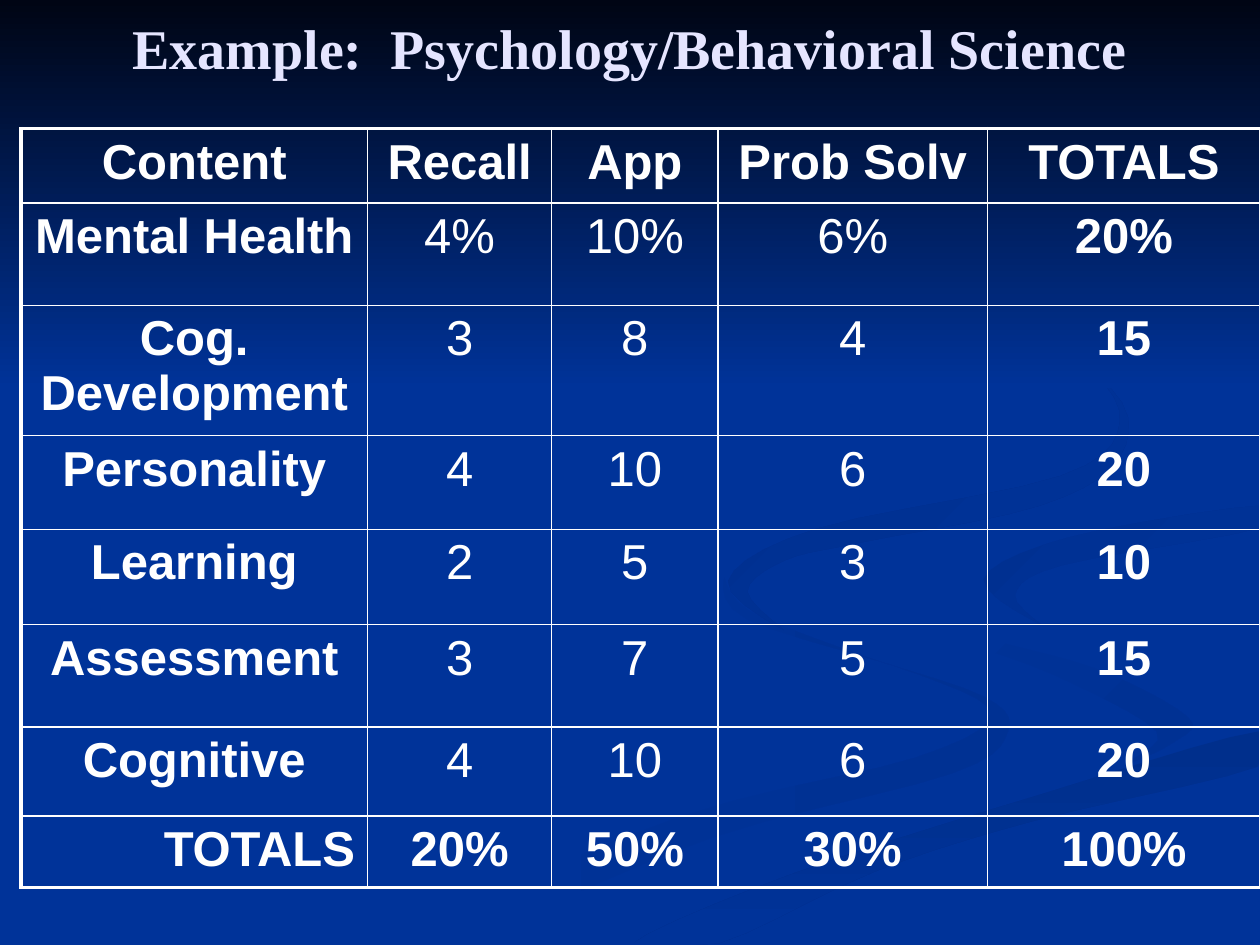
from typing import NamedTuple

from lxml.etree import SubElement
from pptx import Presentation
from pptx.dml.color import RGBColor
from pptx.dml.fill import FillFormat
from pptx.enum.shapes import MSO_SHAPE
from pptx.enum.text import MSO_ANCHOR, PP_ALIGN
from pptx.oxml.ns import qn
from pptx.slide import Slide
from pptx.table import _Cell
from pptx.text.text import TextFrame
from pptx.util import Pt

WHITE = RGBColor(0xFF, 0xFF, 0xFF)
LAVENDER = RGBColor(0xE5, 0xE5, 0xFF)
BLUE = RGBColor(0x00, 0x33, 0x99)
MIDNIGHT = RGBColor(0x00, 0x05, 0x14)
DUSK = RGBColor(0x00, 0x31, 0x93)
SHADE = RGBColor(0x00, 0x2F, 0x8C)
DEEP = RGBColor(0x00, 0x2F, 0x8E)
MIST = RGBColor(0x00, 0x30, 0x91)

SLIDE_WIDTH, SLIDE_HEIGHT = 720, 540
OUTER_BORDER, INNER_BORDER = 2.25, 1
CURVE_STEPS = 5

Point = tuple[float, float]


class Ribbon(NamedTuple):
    start: RGBColor
    end: RGBColor
    angle: int  # clockwise from left-to-right
    outline: list[Point]


RIBBONS = [
    Ribbon(BLUE, DUSK, 0, [
        (562, 398), (491, 374), (428, 349), (414, 330), (427, 354), (524, 385), (566, 408),
        (523, 433), (388, 467), (216, 539), (260, 539), (406, 479), (544, 442), (576, 418)]),
    Ribbon(BLUE, DUSK, 45, [
        (679, 410), (626, 382), (546, 359), (521, 334), (537, 360), (603, 386), (661, 418),
        (644, 436), (671, 424)]),
    Ribbon(SHADE, BLUE, 90, [
        (362, 539), (411, 539), (500, 498), (591, 469), (719, 438), (719, 418), (598, 453),
        (454, 499)]),
    Ribbon(MIST, BLUE, 45, [
        (562, 331), (595, 357), (580, 340), (607, 323), (719, 302), (719, 289), (611, 307)]),
    Ribbon(DEEP, BLUE, 45, [
        (492, 310), (594, 289), (640, 261), (634, 221), (549, 168), (616, 205), (640, 241),
        (606, 272), (467, 302), (416, 332), (448, 360), (427, 338), (449, 320)]),
]

COLUMN_WIDTHS = [198, 105.3, 95, 154, 156]
ROW_HEIGHTS = [42.5, 58.5, 58.5, 53.5, 54.5, 58.5, 51, 29.5]
BLUEPRINT = [
    ("Content", "Recall", "App", "Prob Solv", "TOTALS"),
    ("Mental Health", "4%", "10%", "6%", "20%"),
    ("Cog. Development", "3", "8", "4", "15"),
    ("Personality", "4", "10", "6", "20"),
    ("Learning", "2", "5", "3", "10"),
    ("Assessment", "3", "7", "5", "15"),
    ("Cognitive", "4", "10", "6", "20"),
    ("TOTALS", "20%", "50%", "30%", "100%"),
]
TITLE_FONT = {"name": "Times New Roman", "size": Pt(32), "bold": True}
CELL_FONT = {"name": "Arial", "size": Pt(28)}


def write(frame: TextFrame, wording: str, align: PP_ALIGN, color: RGBColor, font: dict) -> None:
    paragraph = frame.paragraphs[0]
    paragraph.alignment = align
    run = paragraph.add_run()
    run.text = wording
    run.font.color.rgb = color
    for attribute, value in font.items():
        setattr(run.font, attribute, value)


def apply_gradient(fill: FillFormat, start: RGBColor, end: RGBColor, angle: int) -> None:
    fill.gradient()
    fill.gradient_angle = (360 - angle) % 360
    for stop, color in zip(fill.gradient_stops, (start, end)):
        stop.color.rgb = color


def smooth_outline(outline: list[Point]) -> list[Point]:
    """Round a closed outline with a Catmull-Rom curve kept inside the slide."""
    def blend(a: float, b: float, c: float, d: float, t: float) -> float:
        return b + t / 2 * (c - a + t * (2*a - 5*b + 4*c - d + t * (3*(b - c) + d - a)))

    count = len(outline)
    points = []
    for i in range(count):
        nearby = [outline[(i + offset) % count] for offset in (-1, 0, 1, 2)]
        xs, ys = zip(*nearby)
        for step in range(CURVE_STEPS):
            t = step / CURVE_STEPS
            points.append((min(blend(*xs, t), SLIDE_WIDTH), min(blend(*ys, t), SLIDE_HEIGHT)))
    return points


def draw_ribbon(slide: Slide, ribbon: Ribbon) -> None:
    first, *rest = [(Pt(x), Pt(y)) for x, y in smooth_outline(ribbon.outline)]
    builder = slide.shapes.build_freeform(*first)
    builder.add_line_segments(rest, close=True)
    shape = builder.convert_to_shape()
    shape.shadow.inherit = False
    shape.line.fill.background()
    apply_gradient(shape.fill, ribbon.start, ribbon.end, ribbon.angle)


def draw_night_sky(slide: Slide) -> None:
    sky = slide.shapes.add_shape(MSO_SHAPE.RECTANGLE, 0, 0, Pt(SLIDE_WIDTH), Pt(222))
    sky.shadow.inherit = False
    sky.line.fill.background()
    apply_gradient(sky.fill, MIDNIGHT, BLUE, 90)


def draw_title(slide: Slide) -> None:
    frame = slide.shapes.add_textbox(Pt(36), 0, Pt(648), Pt(54)).text_frame
    frame.word_wrap = True
    frame.vertical_anchor = MSO_ANCHOR.MIDDLE
    write(frame, "Example:  Psychology/Behavioral Science", PP_ALIGN.CENTER, LAVENDER, TITLE_FONT)


def set_borders(cell: _Cell, outer_sides: dict[str, bool]) -> None:
    """Draw white borders, heavier on the sides that lie on the table's edge."""
    properties = cell._tc.get_or_add_tcPr()
    for position, (side, is_outer) in enumerate(outer_sides.items()):
        width = Pt(OUTER_BORDER if is_outer else INNER_BORDER)
        border = SubElement(properties, qn(f"a:{side}"), w=str(width))
        solid = SubElement(border, qn("a:solidFill"))
        SubElement(solid, qn("a:srgbClr"), val=str(WHITE))
        properties.insert(position, border)


def draw_blueprint(slide: Slide) -> None:
    last_row, last_column = len(ROW_HEIGHTS) - 1, len(COLUMN_WIDTHS) - 1
    table = slide.shapes.add_table(
        len(ROW_HEIGHTS), len(COLUMN_WIDTHS), Pt(12), Pt(73.5),
        Pt(sum(COLUMN_WIDTHS)), Pt(sum(ROW_HEIGHTS))).table
    table.first_row = table.horz_banding = False
    for column, width in zip(table.columns, COLUMN_WIDTHS):
        column.width = Pt(width)
    for r, (row, height) in enumerate(zip(table.rows, ROW_HEIGHTS)):
        row.height = Pt(height)
        for c, cell in enumerate(row.cells):
            is_heading = r in (0, last_row) or c in (0, last_column)
            align = PP_ALIGN.RIGHT if (r, c) == (last_row, 0) else PP_ALIGN.CENTER
            write(cell.text_frame, BLUEPRINT[r][c], align, WHITE, CELL_FONT | {"bold": is_heading})
            cell.fill.background()
            set_borders(cell, {"lnL": c == 0, "lnR": c == last_column,
                               "lnT": r == 0, "lnB": r == last_row})


def main() -> None:
    presentation = Presentation()
    presentation.slide_width, presentation.slide_height = Pt(SLIDE_WIDTH), Pt(SLIDE_HEIGHT)
    slide = presentation.slides.add_slide(presentation.slide_layouts[6])
    slide.background.fill.solid()
    slide.background.fill.fore_color.rgb = BLUE
    for ribbon in RIBBONS:
        draw_ribbon(slide, ribbon)
    draw_night_sky(slide)
    draw_title(slide)
    draw_blueprint(slide)
    presentation.save("out.pptx")


if __name__ == "__main__":
    main()
